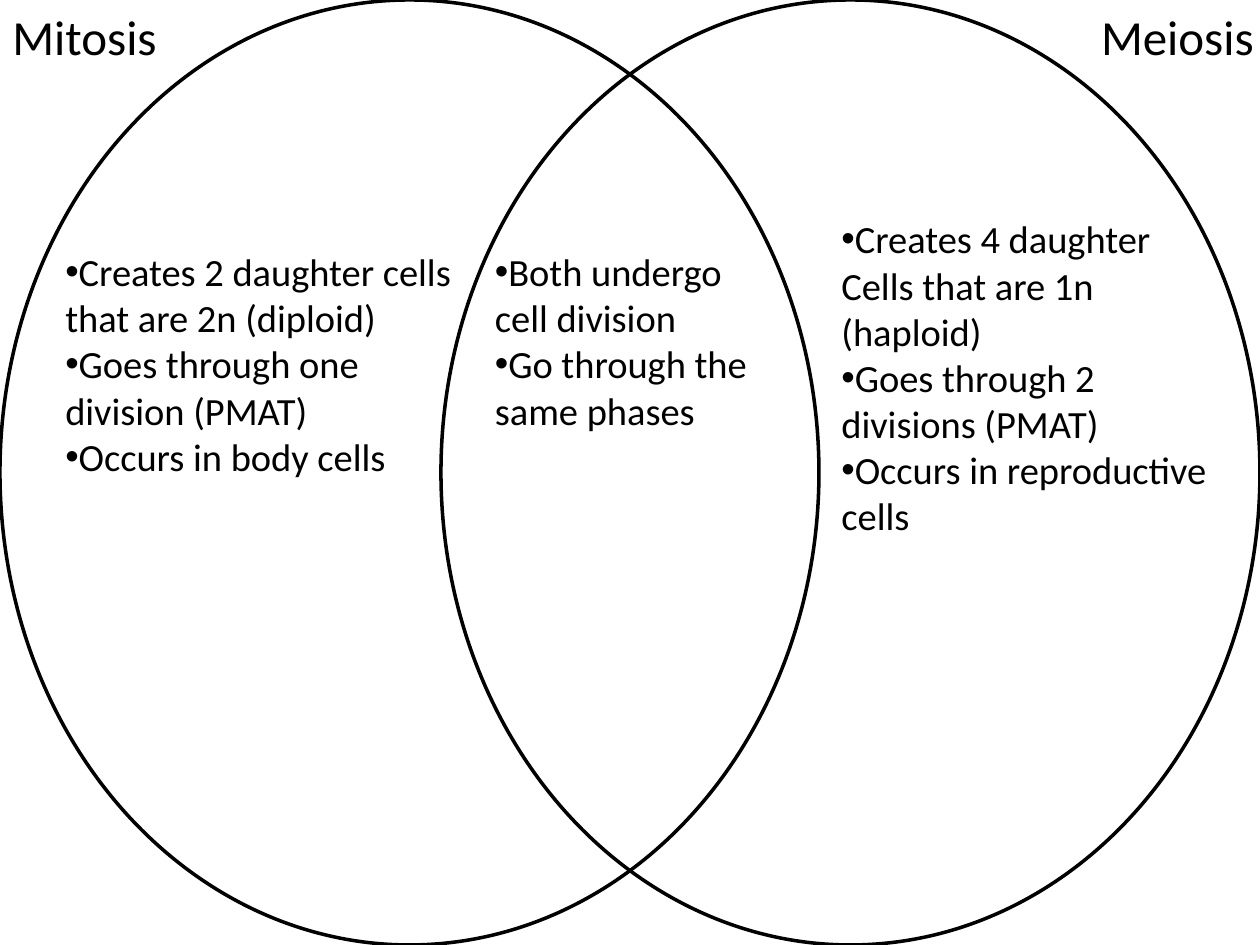
from lxml.etree import SubElement
from pptx import Presentation
from pptx.dml.color import RGBColor
from pptx.enum.shapes import MSO_SHAPE
from pptx.enum.text import MSO_AUTO_SIZE
from pptx.oxml.ns import qn
from pptx.util import Inches, Pt

BLACK = RGBColor(0, 0, 0)
FONT = "Calibri"
SLIDE_WIDTH, SLIDE_HEIGHT = 10, 7.5
CIRCLE_WIDTH = 6.5

# text, left, width
HEADINGS = [("Mitosis", 0, 1.36), ("Meiosis", 8.64, 1.43)]

# left, top, width, height, [(text, has bullet)]
LISTS = [
    (6.58, 1.66, 3.33, 2.69, [
        ("Creates 4 daughter", True),
        ("Cells that are 1n (haploid)", False),
        ("Goes through 2 divisions (PMAT)", True),
        ("Occurs in reproductive cells", True),
    ]),
    (0.42, 1.92, 3.33, 1.95, [
        ("Creates 2 daughter cells that are 2n (diploid)", True),
        ("Goes through one division (PMAT)", True),
        ("Occurs in body cells", True),
    ]),
    (3.83, 1.92, 2.33, 1.95, [
        ("Both undergo cell division", True),
        ("Go through the same phases", True),
    ]),
]


def add_circle(slide, left):
    circle = slide.shapes.add_shape(
        MSO_SHAPE.OVAL, Inches(left), 0, Inches(CIRCLE_WIDTH), Inches(SLIDE_HEIGHT))
    circle.shadow.inherit = False
    circle.fill.background()
    circle.line.color.rgb = BLACK
    circle.line.width = Pt(2)


def add_bullet(paragraph):
    properties = paragraph._p.get_or_add_pPr()
    SubElement(properties, qn("a:buFont"), typeface="Arial")
    SubElement(properties, qn("a:buChar"), char="•")


def add_text(slide, left, top, width, height, lines, size, wrap):
    box = slide.shapes.add_textbox(*map(Inches, (left, top, width, height)))
    frame = box.text_frame
    frame.word_wrap = wrap
    frame.auto_size = MSO_AUTO_SIZE.SHAPE_TO_FIT_TEXT
    for index, (text, has_bullet) in enumerate(lines):
        paragraph = frame.add_paragraph() if index else frame.paragraphs[0]
        if has_bullet:
            add_bullet(paragraph)
        run = paragraph.add_run()
        run.text = text
        run.font.name = FONT
        run.font.size = Pt(size)
        run.font.color.rgb = BLACK


def main():
    presentation = Presentation()
    presentation.slide_width = Inches(SLIDE_WIDTH)
    presentation.slide_height = Inches(SLIDE_HEIGHT)
    slide = presentation.slides.add_slide(presentation.slide_layouts[6])

    for left in (0, SLIDE_WIDTH - CIRCLE_WIDTH):
        add_circle(slide, left)
    for text, left, width in HEADINGS:
        add_text(slide, left, 0, width, 0.57, [(text, False)], 28, wrap=False)
    for left, top, width, height, lines in LISTS:
        add_text(slide, left, top, width, height, lines, 22, wrap=True)

    presentation.save("out.pptx")


if __name__ == "__main__":
    main()
